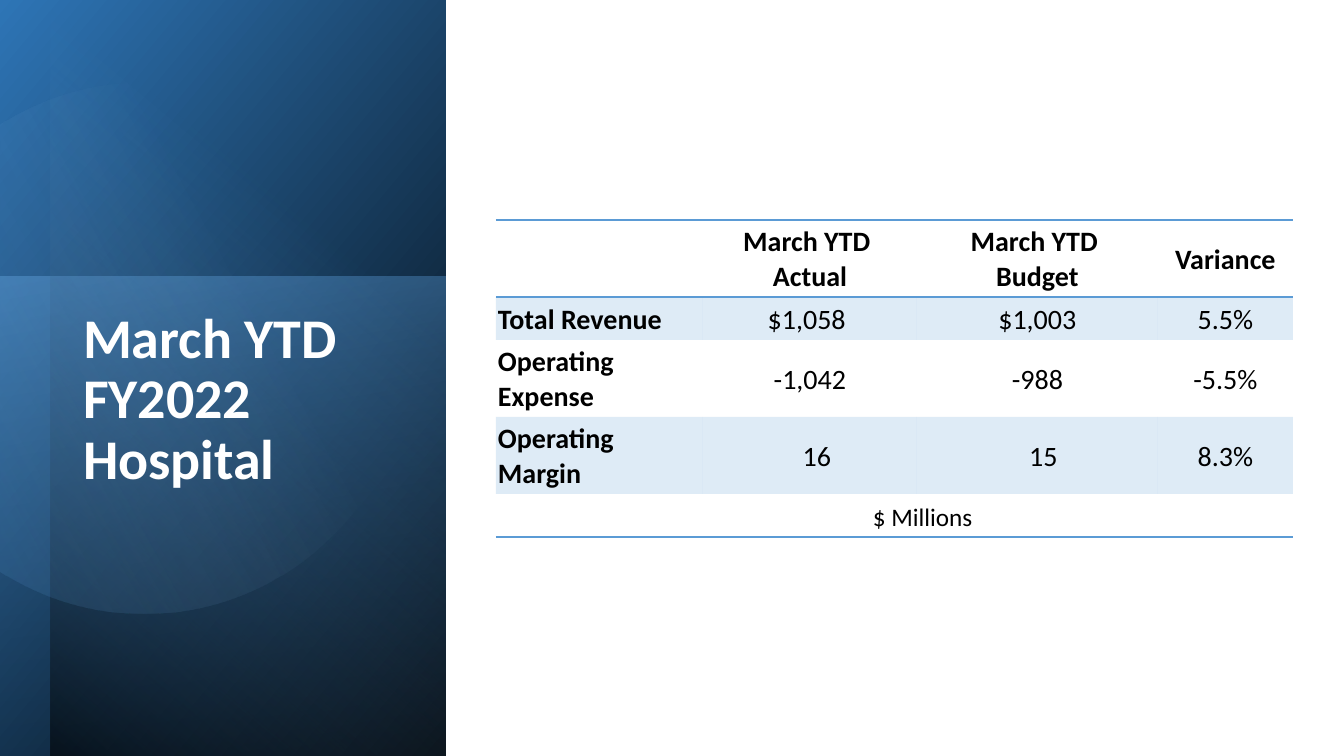
from math import acos, cos, radians, sin
from pptx import Presentation
from pptx.dml.color import RGBColor
from pptx.enum.shapes import MSO_SHAPE
from pptx.enum.text import MSO_ANCHOR, MSO_AUTO_SIZE, PP_ALIGN
from pptx.oxml.ns import qn
from pptx.util import Pt
from lxml.etree import SubElement

SCALE = 12192000 / 1344
ACCENT = "5B9BD5"
TITLE = "March YTD FY2022 Hospital"
UNIT = "$ Millions"
ROWS = [
    ["", "March YTD \vActual", "March YTD \vBudget", "Variance"],
    ["Total Revenue", "$1,058 ", "$1,003", "5.5%"],
    ["Operating Expense", "-1,042", "-988", "-5.5%"],
    ["Operating Margin", "16", "15", "8.3%"],
    ["", "", "", ""],
]
COLUMN_WIDTHS = [207, 214, 241, 135]
ROW_HEIGHTS = [77, 43, 77, 77, 43]
EXTRA_INDENT = {"16": 14, "15": 12}
PANELS = [
    ((-156, 156, 758, 446), 90, True, [(0, "000000", 100), (1, "2E75B6", 100)], 310),
    ((-17, 293, 480, 446), 270, False, [(0, ACCENT, 50), (1, "1F4E79", 0)], 190),
    ((-130, 180, 756, 395), 270, True, [(0, "000000", 59), (0.69, ACCENT, 0)], 220),
]
DISC_CENTER = (144, 350)
DISC_RADIUS = 265
DISC_PIVOT = (182, 357)
DISC_TURN = 101.6
DISC_STOPS = [(0.39, "9DC3E6", 0), (1, "2E75B6", 26)]


def px(value):
    return round(value * SCALE)


def color(code):
    return RGBColor.from_string(code)


def set_alpha(element, percent):
    if percent < 100:
        SubElement(element, qn("a:alpha")).set("val", str(percent * 1000))


def write(frame, text, size=20, shade="000000", bold=False, align=PP_ALIGN.LEFT, spacing=None):
    para = frame.paragraphs[0]
    para.text = text
    para.alignment = align
    para.line_spacing = spacing
    for span in para.runs:
        span.font.name = "Calibri"
        span.font.size = Pt(size)
        span.font.bold = bold
        span.font.color.rgb = color(shade)


def paint_gradient(shape, stops, angle):
    shape.shadow.inherit = False
    shape.line.fill.background()
    shape.fill.gradient()
    shape.fill.gradient_angle = angle
    for stop, (position, code, alpha) in zip(shape.fill.gradient_stops, stops):
        stop.position = position
        stop.color.rgb = color(code)
    shades = shape._element.spPr.iter(qn("a:srgbClr"))
    for shade, (position, code, alpha) in zip(list(shades), stops):
        set_alpha(shade, alpha)


def add_panel(page, place, turn, flipped, stops, angle):
    panel = page.shapes.add_shape(MSO_SHAPE.RECTANGLE, *map(px, place))
    panel.rotation = turn
    if flipped:
        panel._element.spPr.xfrm.set("flipH", "1")
    paint_gradient(panel, stops, angle)


def add_disc(page):
    turn = radians(-DISC_TURN)
    dx, dy = (center - pivot for center, pivot in zip(DISC_CENTER, DISC_PIVOT))
    center_x = DISC_PIVOT[0] + dx * cos(turn) - dy * sin(turn)
    center_y = DISC_PIVOT[1] + dx * sin(turn) + dy * cos(turn)
    reach = acos(-DISC_CENTER[0] / DISC_RADIUS)
    steps = 120
    angles = [turn - reach + 2 * reach * step / steps for step in range(steps + 1)]
    points = [(px(center_x + DISC_RADIUS * cos(angle)), px(center_y + DISC_RADIUS * sin(angle)))
              for angle in angles]
    outline = page.shapes.build_freeform(*points[0])
    outline.add_line_segments(points[1:], close=True)
    disc = outline.convert_to_shape()
    disc.rotation = DISC_TURN
    paint_gradient(disc, DISC_STOPS, 310)


def add_border(cell, side):
    line = SubElement(cell._tc.get_or_add_tcPr(), qn(side), w=str(Pt(1)))
    fill = SubElement(line, qn("a:solidFill"))
    SubElement(fill, qn("a:srgbClr"), val=ACCENT)


def fill_cell(cell, text, row, column):
    if row == 0:
        add_border(cell, "a:lnT")
    if row in (0, len(ROWS) - 1):
        add_border(cell, "a:lnB")
    if row in (1, 3):
        cell.fill.solid()
        cell.fill.fore_color.rgb = color(ACCENT)
        set_alpha(cell._tc.tcPr.find(qn("a:solidFill"))[0], 20)
    else:
        cell.fill.background()
    if text:
        cell.vertical_anchor = MSO_ANCHOR.MIDDLE
        cell.margin_left = px(2 + EXTRA_INDENT.get(text, 0))
        cell.margin_right = cell.margin_top = px(2)
        cell.margin_bottom = 0
        write(cell.text_frame, text, bold=row == 0 or column == 0,
              align=PP_ALIGN.CENTER if column else PP_ALIGN.LEFT)


def add_results(page):
    place = (496, 220, sum(COLUMN_WIDTHS), sum(ROW_HEIGHTS))
    frame = page.shapes.add_table(len(ROWS), len(COLUMN_WIDTHS), *map(px, place))
    table = frame.table
    table.first_row = table.horz_banding = False
    style = table._tbl.tblPr.find(qn("a:tableStyleId"))
    style.text = "{2D5ABB26-0587-4C30-8999-92F81FD0307C}"
    for column, width in zip(table.columns, COLUMN_WIDTHS):
        column.width = px(width)
    for row, height in zip(table.rows, ROW_HEIGHTS):
        row.height = px(height)
    for row, texts in enumerate(ROWS):
        for column, text in enumerate(texts):
            fill_cell(table.cell(row, column), text, row, column)


def place_title(page):
    title = page.shapes.title
    page.shapes._spTree.append(title._element)
    title.left, title.top, title.width, title.height = map(px, (73, 305, 318, 339))
    frame = title.text_frame
    frame.word_wrap = True
    frame.auto_size = MSO_AUTO_SIZE.NONE
    frame.vertical_anchor = MSO_ANCHOR.TOP
    write(frame, TITLE, size=40, shade="FFFFFF", bold=True, spacing=0.9)
    frame.paragraphs[0].space_after = Pt(6)


def main():
    deck = Presentation()
    deck.slide_width, deck.slide_height = px(1344), px(756)
    page = deck.slides.add_slide(deck.slide_layouts[5])
    for panel in PANELS:
        add_panel(page, *panel)
    add_disc(page)
    place_title(page)
    add_results(page)
    box = page.shapes.add_textbox(*map(px, (863, 496, 121, 40)))
    box.text_frame.word_wrap = False
    box.text_frame.auto_size = MSO_AUTO_SIZE.SHAPE_TO_FIT_TEXT
    write(box.text_frame, UNIT, size=18)
    deck.save("out.pptx")


if __name__ == "__main__":
    main()
